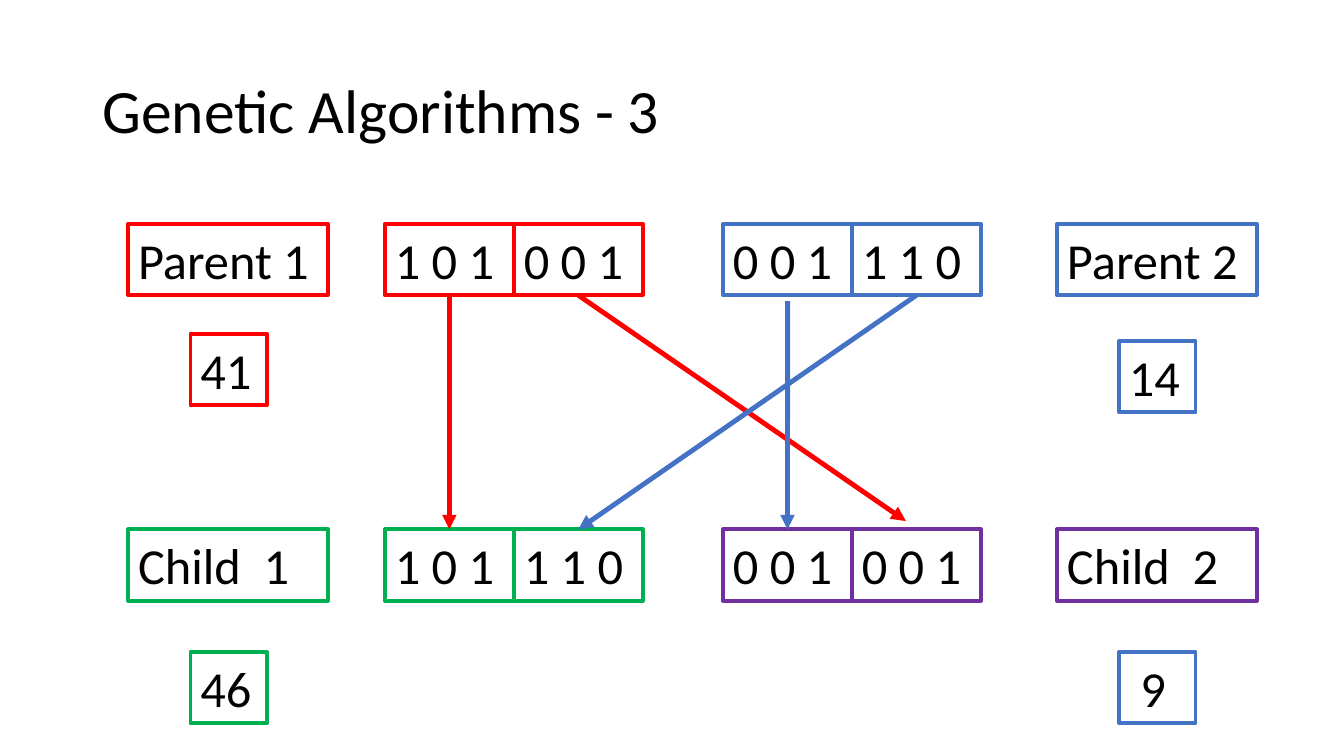
from pptx import Presentation
from pptx.dml.color import RGBColor
from pptx.enum.shapes import MSO_CONNECTOR
from pptx.enum.text import MSO_ANCHOR, MSO_AUTO_SIZE, PP_ALIGN
from pptx.oxml.ns import qn
from pptx.util import Cm, Pt
from lxml import etree

RED, BLUE, GREEN, PURPLE = "FF0000", "4472C4", "00B050", "7030A0"
GENE_W, LABEL_W, SCORE_W, BOX_H = 3.25, 5.03, 1.93, 1.8
LEFT_LABEL_X, RIGHT_LABEL_X = 3.23, 26.64
LEFT_GENES_X, RIGHT_GENES_X = 9.7, 18.22
PARENT_Y, CHILD_Y = 5.64, 13.34


def rgb(color):
    return RGBColor.from_string(color)


def add_box(text, x, y, w, color):
    sp = s.shapes.add_textbox(Cm(x), Cm(y), Cm(w), Cm(BOX_H))
    sp.line.color.rgb = rgb(color)
    sp.line.width = Pt(2.75)
    tf = sp.text_frame
    tf.word_wrap = True
    tf.auto_size = MSO_AUTO_SIZE.SHAPE_TO_FIT_TEXT
    p = tf.paragraphs[0]
    p.text = text
    p.font.name = "Calibri"
    p.font.size = Pt(36)
    p.font.color.rgb = rgb("000000")
    return sp


prs = Presentation()
prs.slide_width, prs.slide_height = Cm(33.87), Cm(19.05)
s = prs.slides.add_slide(prs.slide_layouts[5])

title = s.shapes.title
title.left, title.top, title.width, title.height = Cm(2.33), Cm(1.01), Cm(29.21), Cm(3.68)
tf = title.text_frame
tf.vertical_anchor = MSO_ANCHOR.MIDDLE
p = tf.paragraphs[0]
p.text = "Genetic Algorithms - 3"
p.alignment = PP_ALIGN.LEFT
p.line_spacing = 0.9
p.font.name = "Calibri"
p.font.size = Pt(44)
p.font.color.rgb = rgb("000000")

individuals = [
    ("Parent 1", LEFT_LABEL_X, LEFT_GENES_X, PARENT_Y, ("1 0 1", "0 0 1"), RED),
    ("Parent 2", RIGHT_LABEL_X, RIGHT_GENES_X, PARENT_Y, ("0 0 1", "1 1 0"), BLUE),
    ("Child  1", LEFT_LABEL_X, LEFT_GENES_X, CHILD_Y, ("1 0 1", "1 1 0"), GREEN),
    ("Child  2", RIGHT_LABEL_X, RIGHT_GENES_X, CHILD_Y, ("0 0 1", "0 0 1"), PURPLE),
]
genes = {}
for name, label_x, genes_x, y, halves, color in individuals:
    add_box(name, label_x, y, LABEL_W, color)
    genes[name] = [add_box(half, genes_x + i * GENE_W, y, GENE_W, color)
                   for i, half in enumerate(halves)]

scores = [
    ("41", 4.8, 8.41, RED),
    ("14", 28.2, 8.59, BLUE),
    ("46", 4.8, 16.43, GREEN),
    (" 9", 28.2, 16.43, BLUE),
]
for score, x, y, color in scores:
    add_box(score, x, y, SCORE_W, color)

parent_1, parent_2 = genes["Parent 1"], genes["Parent 2"]
child_1, child_2 = genes["Child  1"], genes["Child  2"]
arrows = [
    (parent_1[0], child_1[0], None, None, RED),
    (parent_1[1], None, None, (22.83, 13.13), RED),
    (None, child_2[0], (19.85, 7.59), None, BLUE),
    (parent_2[1], child_1[1], None, None, BLUE),
]
for source, target, start, end, color in arrows:
    x1, y1 = start or (0, 0)
    x2, y2 = end or (0, 0)
    arrow = s.shapes.add_connector(MSO_CONNECTOR.STRAIGHT, Cm(x1), Cm(y1), Cm(x2), Cm(y2))
    if source is not None:
        arrow.begin_connect(source, 2)
    if target is not None:
        arrow.end_connect(target, 0)
    arrow.line.color.rgb = rgb(color)
    arrow.line.width = Pt(3.5)
    etree.SubElement(arrow.line._get_or_add_ln(), qn("a:tailEnd"), type="triangle")
    etree.SubElement(arrow._element.spPr, qn("a:effectLst"))

prs.save("out.pptx")
